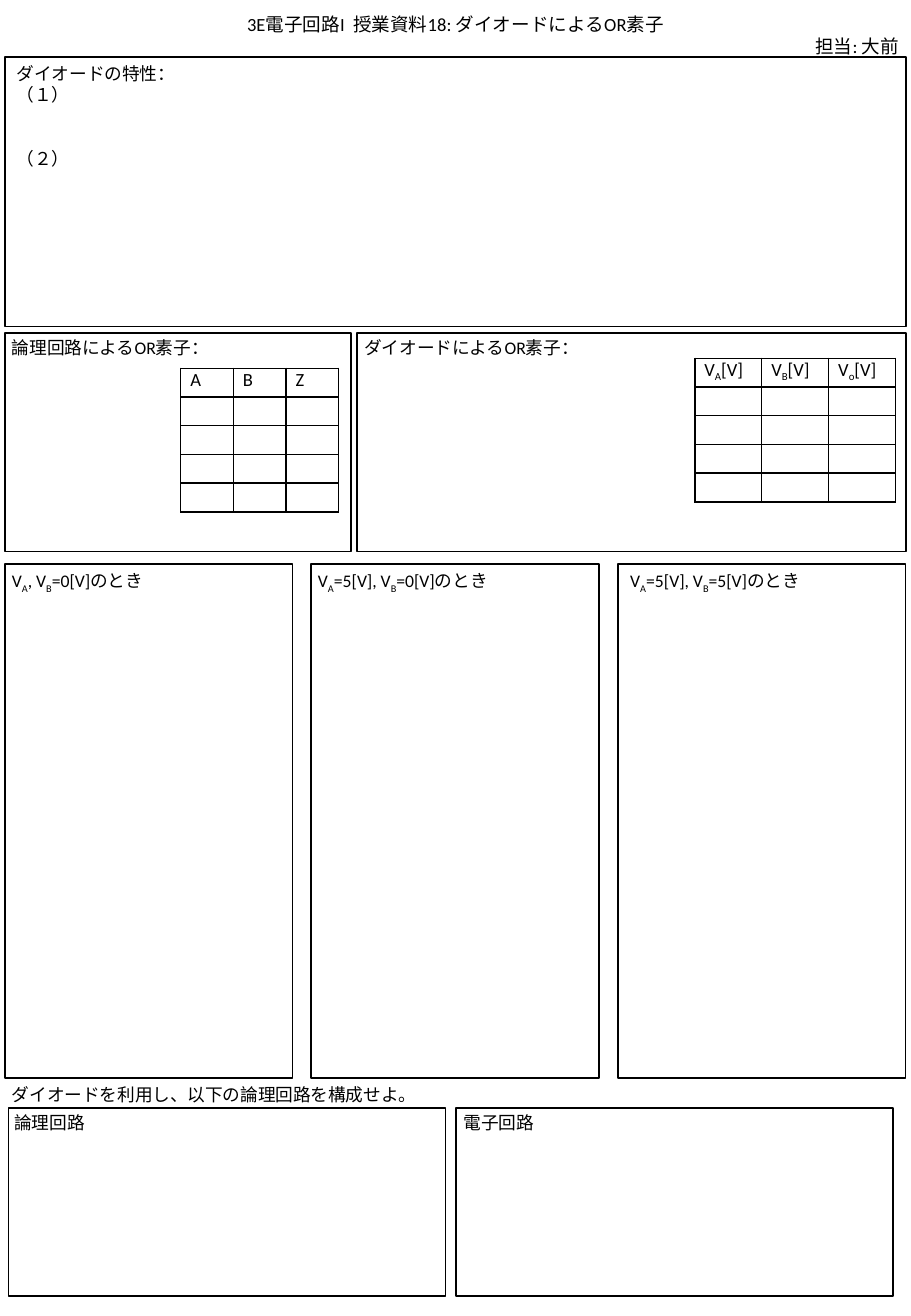
"""Build the worksheet on the diode OR gate."""
from dataclasses import dataclass

from lxml import etree
from pptx import Presentation
from pptx.dml.color import RGBColor
from pptx.enum.shapes import MSO_SHAPE
from pptx.enum.text import MSO_ANCHOR, PP_ALIGN
from pptx.oxml.ns import qn
from pptx.slide import Slide
from pptx.table import _Cell
from pptx.text.text import TextFrame
from pptx.util import Cm, Pt

RECTANGLE = MSO_SHAPE.RECTANGLE
TOP = MSO_ANCHOR.TOP
LEFT, CENTER, RIGHT = PP_ALIGN.LEFT, PP_ALIGN.CENTER, PP_ALIGN.RIGHT


@dataclass(frozen=True)
class Theme:
    """Colours, font and sizes in points."""
    ink: RGBColor = RGBColor(0, 0, 0)
    paper: RGBColor = RGBColor(255, 255, 255)
    font: str = "Calibri"
    heading: float = 11
    body: float = 10.5
    line: float = 1


@dataclass(frozen=True)
class Frame:
    """An outlined answer area, in centimetres."""
    left: float
    top: float
    width: float
    height: float


@dataclass(frozen=True)
class Caption:
    """A one-line label, in centimetres."""
    text: str
    left: float
    top: float
    width: float = 5.49


@dataclass(frozen=True)
class TruthTable:
    """An empty truth table with its headings, in centimetres."""
    headings: tuple[str, ...]
    left: float
    top: float
    column: float
    row: float = 0.6
    rows: int = 5


THEME = Theme()
CASE_TOP, CASE_PITCH = 11.79, 6.41
TASK_TOP, TASK_PITCH = 23.16, 9.35

PROPERTIES = Frame(0.1, 1.19, 18.85, 5.64)
FRAMES = [
    Frame(7.47, 6.96, 11.48, 4.57),
    Frame(0.1, 6.96, 7.24, 4.57),
    *(Frame(0.1 + i * CASE_PITCH, CASE_TOP, 6.02, 10.74) for i in range(3)),
    *(Frame(0.18 + i * TASK_PITCH, TASK_TOP, 9.14, 3.94) for i in range(2)),
]
CAPTIONS = [
    Caption("論理回路によるOR素子：", 0, 6.91),
    Caption("ダイオードによるOR素子：", 7.37, 6.91),
    Caption("V_A, V_B=0[V]のとき", 0, CASE_TOP),
    Caption("V_A=5[V], V_B=0[V]のとき", 6.4, CASE_TOP),
    Caption("V_A=5[V], V_B=5[V]のとき", 12.93, CASE_TOP),
    Caption("ダイオードを利用し、以下の論理回路を構成せよ。", 0, 22.53, 11.91),
    Caption("論理回路", 0.05, 23.11),
    Caption("電子回路", 9.45, 23.11),
]
TABLES = [
    TruthTable(("V_A[V]", "V_B[V]", "V_o[V]"), 14.53, 7.49, 1.4),
    TruthTable(("A", "B", "Z"), 3.78, 7.7, 1.1),
]


def write(frame: TextFrame, text: str, *, size: float = THEME.body,
          align: PP_ALIGN = LEFT, before: float = 0, new: bool = False) -> None:
    """Write a paragraph in which an underscore lowers the next letter."""
    paragraph = frame.add_paragraph() if new else frame.paragraphs[0]
    paragraph.alignment = align
    paragraph.space_before = Pt(before)
    first, *rest = text.split("_")
    pieces = [(first, False)]
    for part in rest:
        pieces += [(part[0], True), (part[1:], False)]
    for piece, lowered in pieces:
        if not piece:
            continue
        run = paragraph.add_run()
        run.text = piece
        run.font.name = THEME.font
        run.font.size = Pt(size)
        run.font.color.rgb = THEME.ink
        if lowered:
            run.font._element.set("baseline", "-25000")
    if not text:
        end = etree.SubElement(paragraph._p, qn("a:endParaRPr"))
        end.set("sz", str(int(size * 100)))


def add_frame(slide: Slide, area: Frame) -> TextFrame:
    """Draw an answer area and return its text frame."""
    box = slide.shapes.add_shape(RECTANGLE, Cm(area.left), Cm(area.top),
                                 Cm(area.width), Cm(area.height))
    box.shadow.inherit = False
    box.fill.solid()
    box.fill.fore_color.rgb = THEME.paper
    box.line.color.rgb = THEME.ink
    box.line.width = Pt(THEME.line)
    box.text_frame.vertical_anchor = TOP
    box.text_frame.word_wrap = True
    return box.text_frame


def add_text(slide: Slide, area: Frame) -> TextFrame:
    """Add a wrapping text box and return its text frame."""
    box = slide.shapes.add_textbox(Cm(area.left), Cm(area.top),
                                   Cm(area.width), Cm(area.height))
    box.text_frame.word_wrap = True
    return box.text_frame


def add_borders(cell: _Cell) -> None:
    """Rule all four sides of a cell."""
    properties = cell._tc.get_or_add_tcPr()
    for index, side in enumerate(("lnL", "lnR", "lnT", "lnB")):
        border = etree.Element(qn(f"a:{side}"), w=str(Pt(THEME.line)))
        fill = etree.SubElement(border, qn("a:solidFill"))
        etree.SubElement(fill, qn("a:srgbClr"), val=str(THEME.ink))
        properties.insert(index, border)


def add_truth_table(slide: Slide, truth: TruthTable) -> None:
    """Draw a ruled table with headings over empty rows."""
    count = len(truth.headings)
    table = slide.shapes.add_table(
        truth.rows, count, Cm(truth.left), Cm(truth.top),
        Cm(truth.column * count), Cm(truth.row * truth.rows)).table
    table.first_row = table.horz_banding = False
    for column in table.columns:
        column.width = Cm(truth.column)
    for r, row in enumerate(table.rows):
        row.height = Cm(truth.row)
        for heading, cell in zip(truth.headings, row.cells):
            cell.margin_left, cell.margin_right = Cm(0.2), Cm(0.25)
            cell.margin_top = cell.margin_bottom = 0
            cell.fill.background()
            add_borders(cell)
            write(cell.text_frame, "" if r else heading, size=THEME.heading)


def main() -> None:
    """Build and save the worksheet."""
    deck = Presentation()
    deck.slide_width, deck.slide_height = Cm(19.05), Cm(27.51)
    slide = deck.slides.add_slide(deck.slide_layouts[6])

    properties = add_frame(slide, PROPERTIES)
    write(properties, "ダイオードの特性：")
    write(properties, "（１）", new=True)
    write(properties, "（２）", new=True, before=25)

    title = add_text(slide, Frame(0, 0.15, 19.05, 1.19))
    write(title, "3E電子回路I  授業資料18: ダイオードによるOR素子",
          size=THEME.heading, align=CENTER)
    write(title, "担当: 大前", size=THEME.heading, align=RIGHT, new=True)

    for area in FRAMES:
        add_frame(slide, area)
    for truth in TABLES:
        add_truth_table(slide, truth)
    for caption in CAPTIONS:
        area = Frame(caption.left, caption.top, caption.width, 0.71)
        write(add_text(slide, area), caption.text)

    deck.save("out.pptx")


if __name__ == "__main__":
    main()
